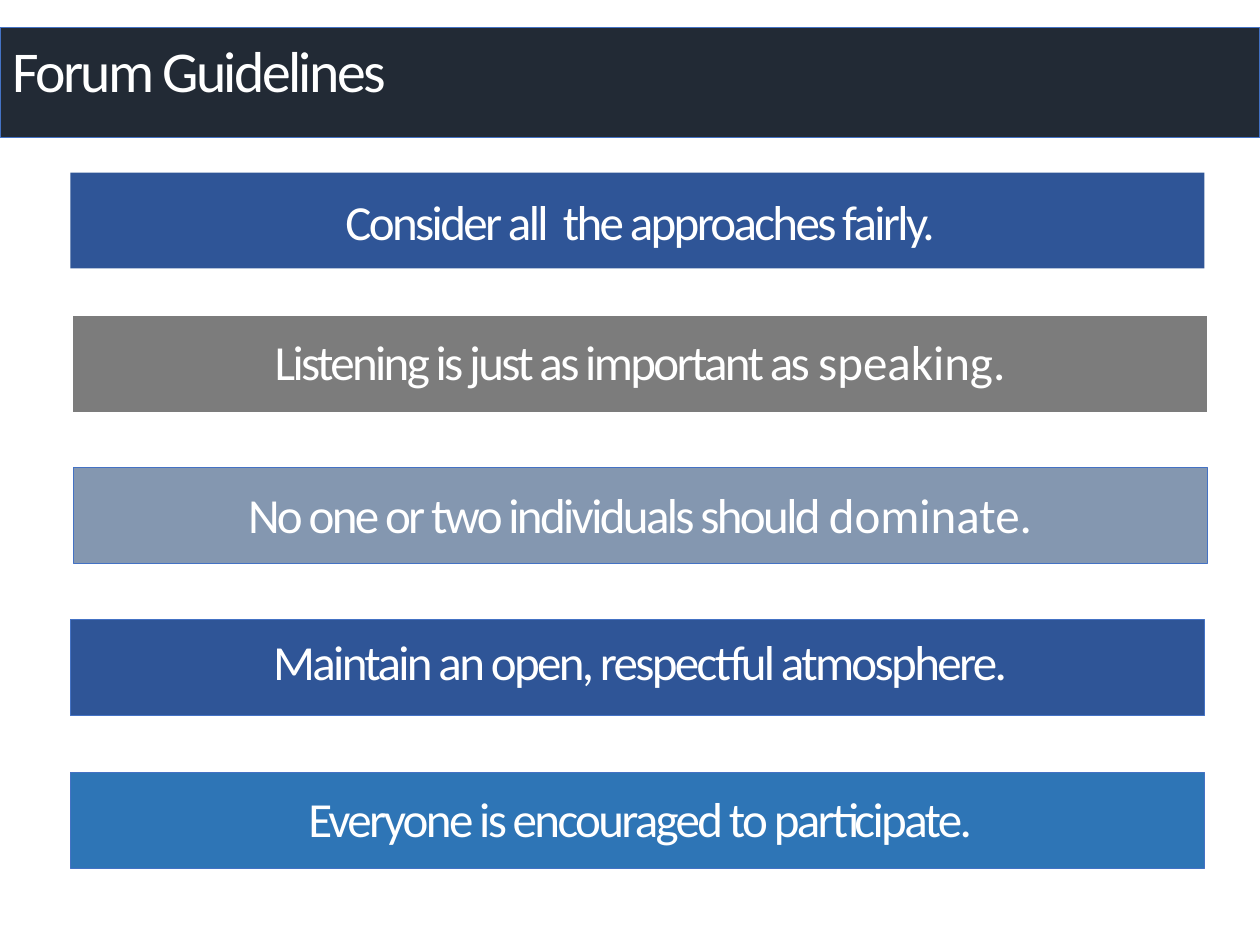
from pptx import Presentation
from pptx.dml.color import RGBColor
from pptx.enum.shapes import MSO_SHAPE
from pptx.enum.text import MSO_ANCHOR, PP_ALIGN
from pptx.util import Inches, Pt

RECTANGLE = MSO_SHAPE.RECTANGLE
TOP, MIDDLE = MSO_ANCHOR.TOP, MSO_ANCHOR.MIDDLE
LEFT, CENTER = PP_ALIGN.LEFT, PP_ALIGN.CENTER

SLIDE_WIDTH, SLIDE_HEIGHT = 10, 7.5
BAR_WIDTH, BAR_HEIGHT = 9, 0.76
TEXT_LEFT, TEXT_HEIGHT = 0.58, 0.57
OUTLINE = "4472C4"
WHITE = "FFFFFF"
TIGHT, NORMAL = -150, 0

TITLE = "Forum Guidelines"
GUIDELINES = [
    {"bar": (0.56, 1.37), "fill": "2F5597", "line": None, "text_top": 1.47,
     "runs": [("Consider all  the approaches fairly.", TIGHT)]},
    {"bar": (0.58, 2.51), "fill": "7C7C7C", "line": None, "text_top": 2.58,
     "runs": [("Listening is just as important as ", TIGHT), ("speaking.", NORMAL)]},
    {"bar": (0.58, 3.71), "fill": "8497B0", "line": OUTLINE, "text_top": 3.8,
     "runs": [("No one or two individuals should ", TIGHT), ("dominate.", NORMAL)]},
    {"bar": (0.56, 4.92), "fill": "2F5597", "line": OUTLINE, "text_top": 4.96,
     "runs": [("Maintain an open, respectful atmosphere.", TIGHT)]},
    {"bar": (0.56, 6.13), "fill": "2E75B6", "line": OUTLINE, "text_top": 6.21,
     "runs": [("Everyone is encouraged to participate.", TIGHT)]},
]


def color(value):
    return RGBColor.from_string(value)


def add_bar(slide, left, top, width, height, fill, line):
    shape = slide.shapes.add_shape(RECTANGLE, *map(Inches, (left, top, width, height)))
    shape.shadow.inherit = False
    shape.fill.solid()
    shape.fill.fore_color.rgb = color(fill)
    if line:
        shape.line.color.rgb = color(line)
        shape.line.width = Pt(0.5)
    else:
        shape.line.fill.background()


def add_text(slide, box, runs, size, frame_format, paragraph_format):
    frame = slide.shapes.add_textbox(*map(Inches, box)).text_frame
    paragraph = frame.paragraphs[0]
    for target, settings in ((frame, frame_format), (paragraph, paragraph_format)):
        for name, value in settings.items():
            setattr(target, name, value)
    for text, spacing in runs:
        run = paragraph.add_run()
        run.text = text
        for name, value in {"name": "Calibri", "size": Pt(size)}.items():
            setattr(run.font, name, value)
        run.font.color.rgb = color(WHITE)
        run.font._element.set("spc", str(spacing))


def main():
    presentation = Presentation()
    presentation.slide_width = Inches(SLIDE_WIDTH)
    presentation.slide_height = Inches(SLIDE_HEIGHT)
    slide = presentation.slides.add_slide(presentation.slide_layouts[6])

    add_bar(slide, 0, 0.22, SLIDE_WIDTH, 0.87, "222A35", OUTLINE)
    add_text(slide, (0, -0.04, SLIDE_WIDTH, 1.25), [(TITLE, TIGHT)], 33,
             {"word_wrap": True, "vertical_anchor": MIDDLE},
             {"alignment": LEFT, "line_spacing": 0.9})

    for guideline in GUIDELINES:
        add_bar(slide, *guideline["bar"], BAR_WIDTH, BAR_HEIGHT,
                guideline["fill"], guideline["line"])
        add_text(slide, (TEXT_LEFT, guideline["text_top"], BAR_WIDTH, TEXT_HEIGHT),
                 guideline["runs"], 28,
                 {"word_wrap": True, "vertical_anchor": TOP}, {"alignment": CENTER})

    presentation.save("out.pptx")


if __name__ == "__main__":
    main()
